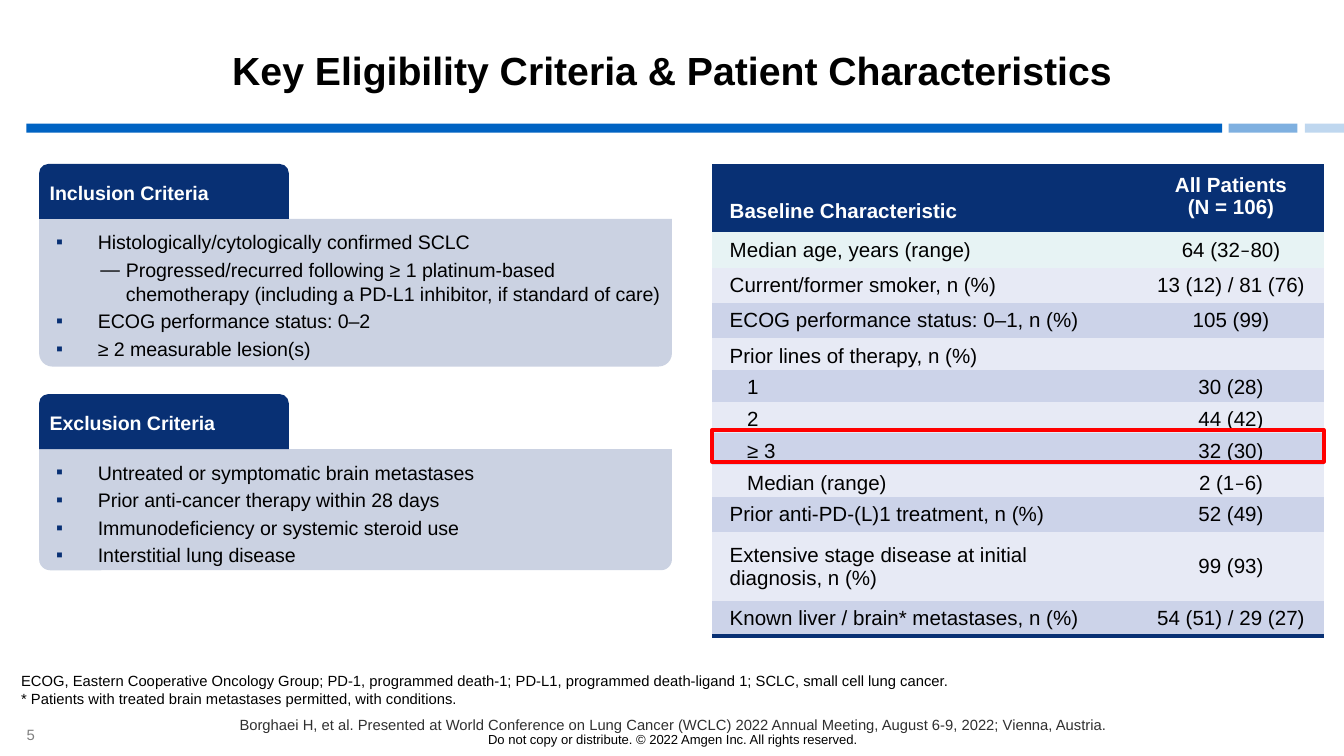
from lxml.etree import SubElement
from pptx import Presentation
from pptx.dml.color import RGBColor
from pptx.enum.shapes import MSO_SHAPE as SHAPE
from pptx.enum.text import MSO_ANCHOR as ANCHOR, PP_ALIGN as ALIGN
from pptx.oxml.ns import qn
from pptx.util import Cm, Pt

NAVY = RGBColor(0x08, 0x30, 0x74)
BLUE = RGBColor(0x00, 0x63, 0xC3)
PANEL = RGBColor(0xCB, 0xD2, 0xE2)
MINT = RGBColor(0xE7, 0xF3, 0xF4)
PALE = RGBColor(0xE7, 0xEA, 0xF5)
LAVENDER = RGBColor(0xCC, 0xD3, 0xE9)
RED = RGBColor(0xFF, 0x00, 0x00)
BLACK = RGBColor(0x00, 0x00, 0x00)
DARK_GRAY = RGBColor(0x30, 0x30, 0x30)
GRAY = RGBColor(0x80, 0x80, 0x80)
WHITE = RGBColor(0xFF, 0xFF, 0xFF)
NO_STYLE = "{2D5ABB26-0587-4C30-8999-92F81FD0307C}"


def write(paragraph, text, size, color=BLACK, bold=False, font="Arial"):
    for number, line in enumerate(text.split("\n")):
        if number:
            paragraph.add_line_break()
        run = paragraph.add_run()
        run.text = line
        run.font.name = font
        run.font.size = Pt(size)
        run.font.bold = bold
        run.font.color.rgb = color


def add_block(kind, left, top, width, height, fill=None):
    block = slide.shapes.add_shape(kind, Cm(left), Cm(top), Cm(width), Cm(height))
    block.shadow.inherit = False
    block.line.fill.background()
    if fill is None:
        block.fill.background()
    else:
        block.fill.solid()
        block.fill.fore_color.rgb = fill
    return block


deck = Presentation()
deck.slide_width, deck.slide_height = Cm(25.4), Cm(14.29)
slide = deck.slides.add_slide(deck.slide_layouts[6])

for left, width, opacity in [(0.5, 22.6, 100), (23.22, 1.3, 50), (24.66, 0.74, 25)]:
    rule = add_block(SHAPE.RECTANGLE, left, 2.34, width, 0.17, BLUE)
    if opacity < 100:
        tint = rule.fill._xPr.find(".//" + qn("a:srgbClr"))
        SubElement(tint, qn("a:alpha")).set("val", str(opacity * 1000))

captions = [
    ("Key Eligibility Criteria & Patient Characteristics",
     0.79, 0.76, 23.83, 0.79, 21, BLACK, True, ALIGN.CENTER, 1, True),
    ("ECOG, Eastern Cooperative Oncology Group; PD-1, programmed death-1; "
     "PD-L1, programmed death-ligand 1; SCLC, small cell lung cancer.\n"
     "* Patients with treated brain metastases permitted, with conditions.",
     0.4, 12.7, 24.54, 0.69, 7.9, BLACK, False, ALIGN.LEFT, 1, False),
    ("Borghaei H, et al. Presented at World Conference on Lung Cancer (WCLC) "
     "2022 Annual Meeting, August 6-9, 2022; Vienna, Austria.",
     2.87, 13.41, 19.69, 0.58, 7.9, DARK_GRAY, False, ALIGN.CENTER, 1, True),
    ("Do not copy or distribute. © 2022 Amgen Inc. All rights reserved.",
     5.64, 13.74, 14.15, 0.53, 7, BLACK, False, ALIGN.CENTER, 0.9, True),
    ("5", -0.69, 13.72, 1.35, 0.61, 8, GRAY, False, ALIGN.RIGHT, 1, False),
]
for text, left, top, width, height, size, color, bold, align, spacing, inset in captions:
    caption = slide.shapes.add_textbox(Cm(left), Cm(top), Cm(width), Cm(height)).text_frame
    caption.word_wrap = True
    if not inset:
        caption.margin_left = caption.margin_right = 0
        caption.margin_top = caption.margin_bottom = 0
    paragraph = caption.paragraphs[0]
    paragraph.alignment = align
    paragraph.line_spacing = spacing
    write(paragraph, text, size, color, bold)

criteria = [
    ("Inclusion Criteria", 3.1, 2.79, [
        (0, "Histologically/cytologically confirmed SCLC"),
        (1, "Progressed/recurred following ≥ 1 platinum-based chemotherapy "
            "(including a PD-L1 inhibitor, if standard of care)"),
        (0, "ECOG performance status: 0–2"),
        (0, "≥ 2 measurable lesion(s)"),
    ]),
    ("Exclusion Criteria", 7.45, 2.29, [
        (0, "Untreated or symptomatic brain metastases"),
        (0, "Prior anti-cancer therapy within 28 days"),
        (0, "Immunodeficiency or systemic steroid use"),
        (0, "Interstitial lung disease"),
    ]),
]
bullets = [("▪", 0.79, 0.79), ("―", 1.32, 0.48)]
for heading, top, height, items in criteria:
    panel_top = top + 1.04
    panel = add_block(SHAPE.ROUND_2_SAME_RECTANGLE, 0.74, panel_top, 11.96, height, PANEL)
    panel.adjustments[0], panel.adjustments[1] = 0, 0.09

    tab = add_block(SHAPE.ROUND_2_SAME_RECTANGLE, 0.74, top, 4.72, 1.04, NAVY)
    label = tab.text_frame
    label.margin_left = label.margin_right = Cm(0.15)
    label.margin_top = label.margin_bottom = Cm(0.08)
    label.vertical_anchor = ANCHOR.MIDDLE
    label.paragraphs[0].alignment = ALIGN.LEFT
    write(label.paragraphs[0], heading, 10.5, WHITE, True)

    item_list = slide.shapes.add_textbox(
        Cm(0.81), Cm(panel_top + 0.09), Cm(12.22), Cm(height)).text_frame
    item_list.word_wrap = True
    for number, (level, text) in enumerate(items):
        paragraph = item_list.add_paragraph() if number else item_list.paragraphs[0]
        mark, indent, hanging = bullets[level]
        properties = paragraph._p.get_or_add_pPr()
        properties.set("marL", str(Cm(indent)))
        properties.set("indent", str(-Cm(hanging)))
        if level == 0:
            mark_color = SubElement(properties, qn("a:buClr"))
            SubElement(mark_color, qn("a:srgbClr")).set("val", str(NAVY))
        SubElement(properties, qn("a:buFont")).set("typeface", "Arial")
        SubElement(properties, qn("a:buChar")).set("char", mark)
        paragraph.level = level
        paragraph.space_after = Pt(2.2)
        write(paragraph, text, 10.5)

TALL, NORMAL, SHORT = 1.28, 0.65, 0.6
baseline = [
    ("Baseline Characteristic", "All Patients\n(N = 106)", TALL, NAVY),
    ("Median age, years (range)", "64 (32–80)", NORMAL, MINT),
    ("Current/former smoker, n (%)", "13 (12) / 81 (76)", NORMAL, PALE),
    ("ECOG performance status: 0–1, n (%)", "105 (99)", NORMAL, LAVENDER),
    ("Prior lines of therapy, n (%)", "", SHORT, PALE),
    ("1", "30 (28)", SHORT, LAVENDER),
    ("2", "44 (42)", SHORT, PALE),
    ("≥ 3", "32 (30)", SHORT, LAVENDER),
    ("Median (range)", "2 (1–6)", SHORT, PALE),
    ("Prior anti-PD-(L)1 treatment, n (%)", "52 (49)", NORMAL, LAVENDER),
    ("Extensive stage disease at initial diagnosis, n (%)", "99 (93)", TALL, PALE),
    ("Known liver / brain* metastases, n (%)", "54 (51) / 29 (27)", NORMAL, LAVENDER),
]
heights = [height for _, _, height, _ in baseline]
table_left, table_top, table_width = 13.46, 3.1, 11.56
table = slide.shapes.add_table(
    len(baseline), 2, Cm(table_left), Cm(table_top),
    Cm(table_width), Cm(sum(heights))).table
table.first_row = table.horz_banding = False
table._tbl.tblPr.find(qn("a:tableStyleId")).text = NO_STYLE
table.columns[0].width, table.columns[1].width = Cm(8.05), Cm(3.51)

for row, (characteristic, value, height, fill) in enumerate(baseline):
    table.rows[row].height = Cm(height)
    for column, text in enumerate((characteristic, value)):
        cell = table.cell(row, column)
        cell.fill.solid()
        cell.fill.fore_color.rgb = fill
        cell.margin_left = cell.margin_right = Cm(0.33)
        cell.margin_top = Cm(0.18 if height == TALL else 0.1)
        cell.margin_bottom = Cm({TALL: 0.18, NORMAL: 0.1, SHORT: 0.03}[height])
        cell.vertical_anchor = ANCHOR.MIDDLE
        if row == 0:
            cell.vertical_anchor = ANCHOR.TOP if column else ANCHOR.BOTTOM
        paragraph = cell.text_frame.paragraphs[0]
        if column:
            paragraph.alignment = ALIGN.CENTER
        elif 5 <= row <= 8:
            paragraph._p.get_or_add_pPr().set("marL", str(Cm(0.33)))
        pieces = text.partition("–") if column else [text]
        for piece in filter(None, pieces):
            write(paragraph, piece, 11, BLACK if row else WHITE, row == 0,
                  "Calibri" if piece == "–" else "Arial")
        if not text:
            SubElement(paragraph._p, qn("a:endParaRPr")).set("sz", "1100")
        if row == len(baseline) - 1:
            properties = cell._tc.get_or_add_tcPr()
            border = SubElement(properties, qn("a:lnB"))
            border.set("w", str(Pt(2.25)))
            border_fill = SubElement(border, qn("a:solidFill"))
            SubElement(border_fill, qn("a:srgbClr")).set("val", str(NAVY))
            properties.insert(0, border)

highlight = add_block(SHAPE.RECTANGLE, table_left, table_top + sum(heights[:7]),
                      table_width, SHORT)
highlight.line.color.rgb = RED
highlight.line.width = Pt(2)

deck.save("out.pptx")
